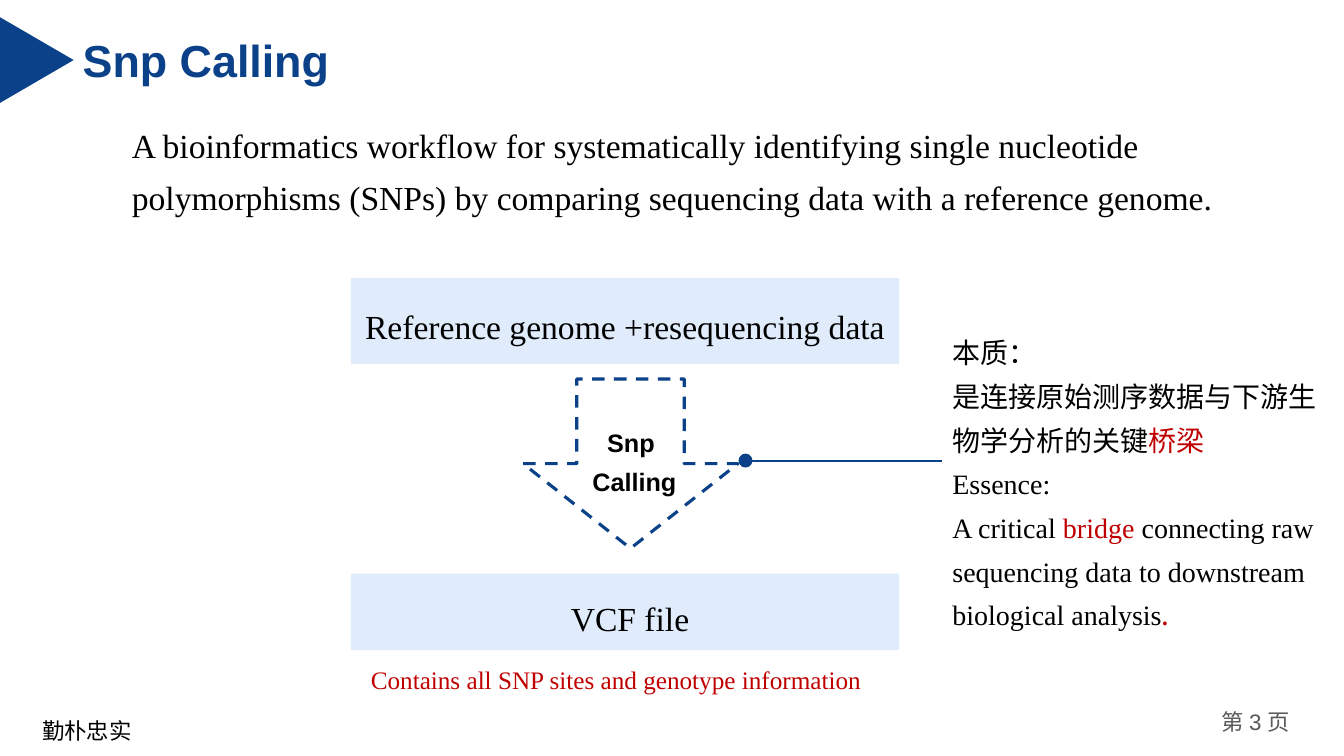
import pptx
import pptx.dml.color
import pptx.enum.dml
import pptx.enum.shapes
import pptx.enum.text
import pptx.oxml
import pptx.oxml.ns
import pptx.util

Pt = pptx.util.Pt
SHAPE = pptx.enum.shapes.MSO_SHAPE
ALIGN = pptx.enum.text.PP_ALIGN
COLORS = {"navy": "0B4189", "pale": "BCD6FA", "black": "000000", "red": "C00000", "grey": "595959"}
SERIF, SANS, CJK = "Times New Roman", "Arial", "Noto Sans CJK SC"
LINE_PITCH = 1.56  # line height per point of text size


def rgb(name):
    return pptx.dml.color.RGBColor.from_string(COLORS[name])


def write(box, paragraphs, size, font=SERIF, color="black", bold=False,
          align=ALIGN.LEFT, wrap=True, pitch=LINE_PITCH):
    """Fill a text box; each paragraph is a list of (text, format overrides)."""
    frame = box.text_frame
    frame.word_wrap = wrap
    frame.auto_size = pptx.enum.text.MSO_AUTO_SIZE.NONE
    frame.vertical_anchor = pptx.enum.text.MSO_ANCHOR.TOP
    for index, pieces in enumerate(paragraphs):
        paragraph = frame.add_paragraph() if index else frame.paragraphs[0]
        paragraph.alignment = align
        paragraph.space_before = Pt(0)
        if pitch:
            paragraph.line_spacing = Pt(round(size * pitch, 1))
        for text, override in pieces:
            run = paragraph.add_run()
            run.text = text
            run.font.size = Pt(size)
            run.font.bold = bold
            run.font.name = override.get("font", font)
            run.font.color.rgb = rgb(override.get("color", color))
            east_asian = pptx.oxml.parse_xml(
                f'<a:ea {pptx.oxml.ns.nsdecls("a")} typeface="{CJK}"/>')
            run._r.get_or_add_rPr().append(east_asian)


deck = pptx.Presentation()
deck.slide_width, deck.slide_height = Pt(960), Pt(540)
slide = deck.slides.add_slide(deck.slide_layouts[5])
shapes = slide.shapes

# Heading
title = shapes.title
title.left, title.top, title.width, title.height = Pt(49.7), Pt(18.7), Pt(373), Pt(54.7)
title.text_frame.margin_left = title.text_frame.margin_right = Pt(9.4)
title.text_frame.margin_top = title.text_frame.margin_bottom = Pt(5)
write(title, [[("Snp Calling", {})]], 32, font=SANS, color="navy", bold=True,
      wrap=False, pitch=None)

# Filled shapes: kind, left, top, width, height, rotation, colour, opacity in percent
for kind, left, top, width, height, turn, color, opacity in [
    (SHAPE.ISOSCELES_TRIANGLE, -4.3, 16.6, 61.2, 52.6, 90, "navy", 100),
    (SHAPE.RECTANGLE, 250.6, 198.7, 391.7, 61.2, 0, "pale", 46),
    (SHAPE.RECTANGLE, 250.6, 409.7, 391.7, 54.7, 0, "pale", 46),
    (SHAPE.OVAL, 527.5, 324, 10, 10, 0, "navy", 100),
]:
    block = shapes.add_shape(kind, Pt(left), Pt(top), Pt(width), Pt(height))
    block.rotation = turn
    block.shadow.inherit = False
    block.line.fill.background()
    block.fill.solid()
    block.fill.fore_color.rgb = rgb(color)
    if opacity < 100:
        fill_color = block._element.spPr.find(".//" + pptx.oxml.ns.qn("a:srgbClr"))
        fill_color.append(pptx.oxml.parse_xml(
            f'<a:alpha {pptx.oxml.ns.nsdecls("a")} val="{opacity * 1000}"/>'))

# Dashed arrow between the two steps
calling_arrow = shapes.add_shape(SHAPE.DOWN_ARROW, Pt(373.7), Pt(270.7), Pt(153.4), Pt(121))
calling_arrow.shadow.inherit = False
calling_arrow.fill.background()
calling_arrow.line.color.rgb = rgb("navy")
calling_arrow.line.width = Pt(2.25)
calling_arrow.line.dash_style = pptx.enum.dml.MSO_LINE.DASH

# Leader from the arrow to the remark
leader = shapes.add_connector(pptx.enum.shapes.MSO_CONNECTOR.STRAIGHT,
                              Pt(537), Pt(329), Pt(673.2), Pt(329))
leader.line.color.rgb = rgb("navy")
leader.line.width = Pt(1.5)
leader._element.spPr.append(pptx.oxml.parse_xml(
    f'<a:effectLst {pptx.oxml.ns.nsdecls("a")}/>'))

definition = ("A bioinformatics workflow for systematically identifying single nucleotide "
              "polymorphisms (SNPs) by comparing sequencing data with a reference genome.")
essence = [
    [("本质：", {"font": CJK})],
    [("是连接原始测序数据与下游生物学分析的关键", {"font": CJK}),
     ("桥梁", {"font": CJK, "color": "red"})],
    [("Essence:", {})],
    [("A critical ", {}), ("bridge", {"color": "red"}),
     (" connecting raw sequencing data to downstream biological analysis", {}),
     (".", {"font": CJK, "color": "red"})],
]
page_number = [[("第 ", {"font": CJK}), ("3 ", {}), ("页", {"font": CJK})]]

# Text boxes: left, top, width, height, paragraphs, size, format
for left, top, width, height, paragraphs, size, style in [
    (87.1, 77, 828.7, 71.3, [[(definition, {})]], 24, {}),
    (250.6, 206.6, 391.7, 44.6, [[("Reference genome +resequencing data", {})]], 24,
     {"align": ALIGN.CENTER}),
    (250.6, 414.7, 398.9, 44.6, [[("VCF file", {})]], 24, {"align": ALIGN.CENTER}),
    (411.1, 295.2, 79.2, 92.2, [[("Snp", {})], [(" Calling", {})]], 18,
     {"font": SANS, "bold": True, "align": ALIGN.CENTER, "wrap": False}),
    (673.2, 229, 276.5, 230.4, essence, 20, {}),
    (257.8, 464.4, 391.7, 44.6,
     [[("Contains all SNP sites and genotype information", {})]], 18, {"color": "red"}),
    (23, 502.6, 225.4, 31, [[("勤朴忠实", {})]], 16, {"font": CJK}),
    (853.9, 502.6, 86.4, 28.8, page_number, 16,
     {"font": SANS, "color": "grey", "align": ALIGN.CENTER, "pitch": None}),
]:
    box = shapes.add_textbox(Pt(left), Pt(top), Pt(width), Pt(height))
    write(box, paragraphs, size, **style)

deck.save("out.pptx")
